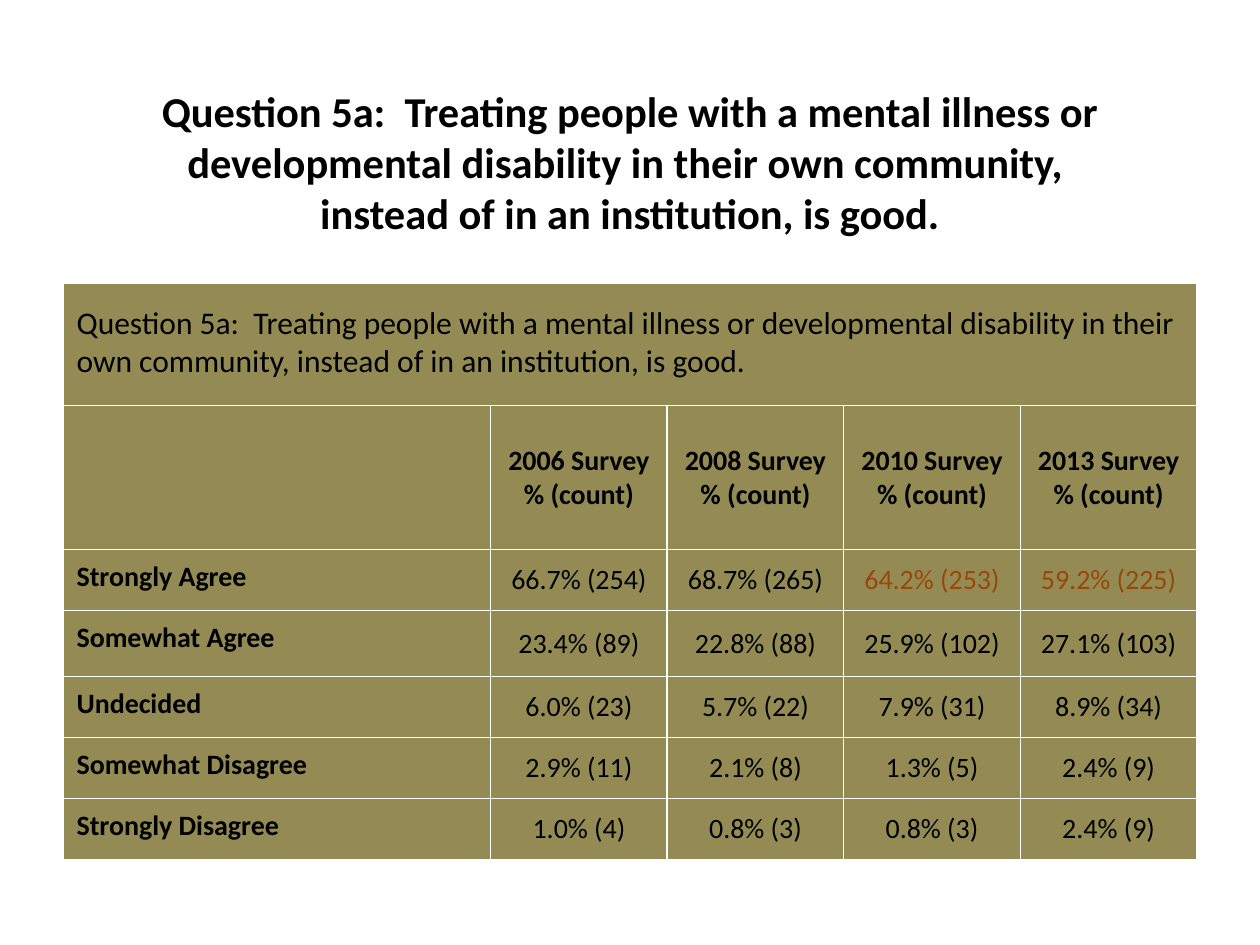
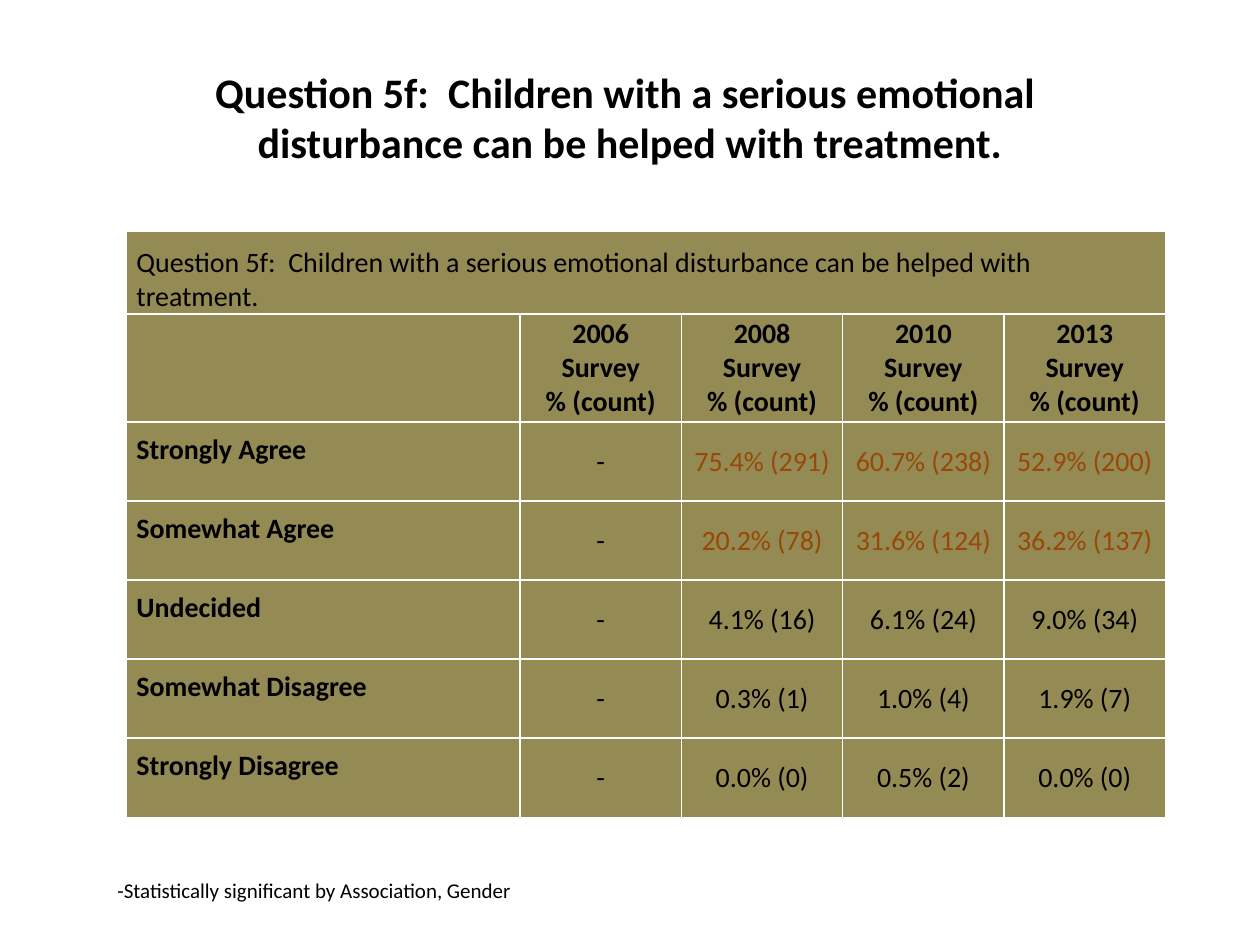
from lxml import etree
from pptx import Presentation
from pptx.dml.color import RGBColor
from pptx.enum.text import MSO_ANCHOR as Anchor, MSO_AUTO_SIZE as AutoSize, PP_ALIGN as Align
from pptx.oxml.ns import qn
from pptx.util import Pt

OLIVE, RUST, BLACK, WHITE = "948A54", "984807", "000000", "FFFFFF"
FONT = "Calibri"
YEARS = [2006, 2008, 2010, 2013]
ANSWERS = ["Strongly Agree", "Somewhat Agree", "Undecided",
           "Somewhat Disagree", "Strongly Disagree"]

# Highlighted cells are (answer, year) index pairs.
QUESTIONS = [
    dict(
        title="Question 5a:  Treating people with a mental illness or developmental "
              "disability in their own community, \ninstead of in an institution, is good.",
        title_size=24.3, title_anchor=Anchor.TOP, title_inset=27,
        caption="Question 5a:  Treating people with a mental illness or developmental "
                "disability in their own community, instead of in an institution, is good.",
        caption_size=18, caption_anchor=Anchor.TOP, caption_inset=12,
        left=36, top=162, inset=7.8,
        columns=[244.4] + [100.9] * 4,
        rows=[69.8, 82.2, 34.9, 37.7, 34.9, 34.9, 34.9],
        results=[
            ["66.7% (254)", "68.7% (265)", "64.2% (253)", "59.2% (225)"],
            ["23.4% (89)", "22.8% (88)", "25.9% (102)", "27.1% (103)"],
            ["6.0% (23)", "5.7% (22)", "7.9% (31)", "8.9% (34)"],
            ["2.9% (11)", "2.1% (8)", "1.3% (5)", "2.4% (9)"],
            ["1.0% (4)", "0.8% (3)", "0.8% (3)", "2.4% (9)"],
        ],
        highlights={(0, 2), (0, 3)},
        footnote=None,
    ),
    dict(
        title="Question 5f:  Children with a serious emotional \n"
              "disturbance can be helped with treatment.",
        title_size=24, title_anchor=Anchor.MIDDLE, title_inset=3.6,
        caption="Question 5f:  Children with a serious emotional disturbance "
                "can be helped with treatment.",
        caption_size=16, caption_anchor=Anchor.BOTTOM, caption_inset=0,
        left=72, top=132, inset=6,
        columns=[225.2] + [92.2] * 4,
        rows=[47.4, 61.7] + [45.2] * 5,
        results=[
            ["-", "75.4% (291)", "60.7% (238)", "52.9% (200)"],
            ["-", "20.2% (78)", "31.6% (124)", "36.2% (137)"],
            ["-", "4.1% (16)", "6.1% (24)", "9.0% (34)"],
            ["-", "0.3% (1)", "1.0% (4)", "1.9% (7)"],
            ["-", "0.0% (0)", "0.5% (2)", "0.0% (0)"],
        ],
        highlights={(row, year) for row in (0, 1) for year in (1, 2, 3)},
        footnote="-Statistically significant by Association, Gender",
    ),
]


def paint(fill, color):
    fill.solid()
    fill.fore_color.rgb = RGBColor.from_string(color)


def write(frame, text, size=16, color=BLACK, bold=False, align=Align.LEFT):
    """Fill a text frame, one paragraph per line of text."""
    frame.text = text
    for para in frame.paragraphs:
        para.alignment = align
        for span in para.runs:
            span.font.name = FONT
            span.font.size = Pt(size)
            span.font.bold = bold
            paint(span.font.fill, color)


deck = Presentation()
deck.slide_width, deck.slide_height = Pt(720), Pt(540)
title_only = deck.slide_layouts[5]

for question in QUESTIONS:
    page = deck.slides.add_slide(title_only)

    title = page.shapes.title
    title.left, title.top, title.width, title.height = Pt(36), Pt(21.6), Pt(648), Pt(90)
    frame = title.text_frame
    write(frame, question["title"], size=question["title_size"], bold=True, align=Align.CENTER)
    frame.auto_size = AutoSize.NONE
    frame.vertical_anchor = question["title_anchor"]
    frame.margin_top = Pt(question["title_inset"])

    columns, rows = question["columns"], question["rows"]
    table = page.shapes.add_table(
        len(rows), len(columns), Pt(question["left"]), Pt(question["top"]),
        Pt(sum(columns)), Pt(sum(rows))).table
    table.first_row = table.horz_banding = False
    for column, width in zip(table.columns, columns):
        column.width = Pt(width)
    for row, height in zip(table.rows, rows):
        row.height = Pt(height)

    for cell in table.iter_cells():
        cell.margin_left = cell.margin_right = Pt(question["inset"])
        cell.margin_top = cell.margin_bottom = 0
        cell.vertical_anchor = Anchor.MIDDLE
        properties = cell._tc.get_or_add_tcPr()
        for side in ("a:lnL", "a:lnR", "a:lnT", "a:lnB"):
            border = etree.SubElement(properties, qn(side), w=str(Pt(1)))
            border_fill = etree.SubElement(border, qn("a:solidFill"))
            etree.SubElement(border_fill, qn("a:srgbClr"), val=WHITE)
        paint(cell.fill, OLIVE)

    caption = table.cell(0, 0)
    caption.merge(table.cell(0, len(columns) - 1))
    caption.vertical_anchor = question["caption_anchor"]
    caption.margin_top = Pt(question["caption_inset"])
    write(caption.text_frame, question["caption"], size=question["caption_size"])

    for column, year in enumerate(YEARS, start=1):
        write(table.cell(1, column).text_frame, f"{year} Survey\n% (count)",
              bold=True, align=Align.CENTER)

    for index, (answer, results) in enumerate(zip(ANSWERS, question["results"])):
        label = table.cell(index + 2, 0)
        label.vertical_anchor = Anchor.TOP
        label.margin_top = Pt(6)
        write(label.text_frame, answer, bold=True)
        for year, result in enumerate(results):
            color = RUST if (index, year) in question["highlights"] else BLACK
            write(table.cell(index + 2, year + 1).text_frame, result,
                  color=color, align=Align.CENTER)

    if question["footnote"]:
        box = page.shapes.add_textbox(Pt(60), Pt(498), Pt(252), Pt(21.6))
        box.text_frame.word_wrap = True
        box.text_frame.auto_size = AutoSize.SHAPE_TO_FIT_TEXT
        write(box.text_frame, question["footnote"], size=12)

deck.save("out.pptx")
